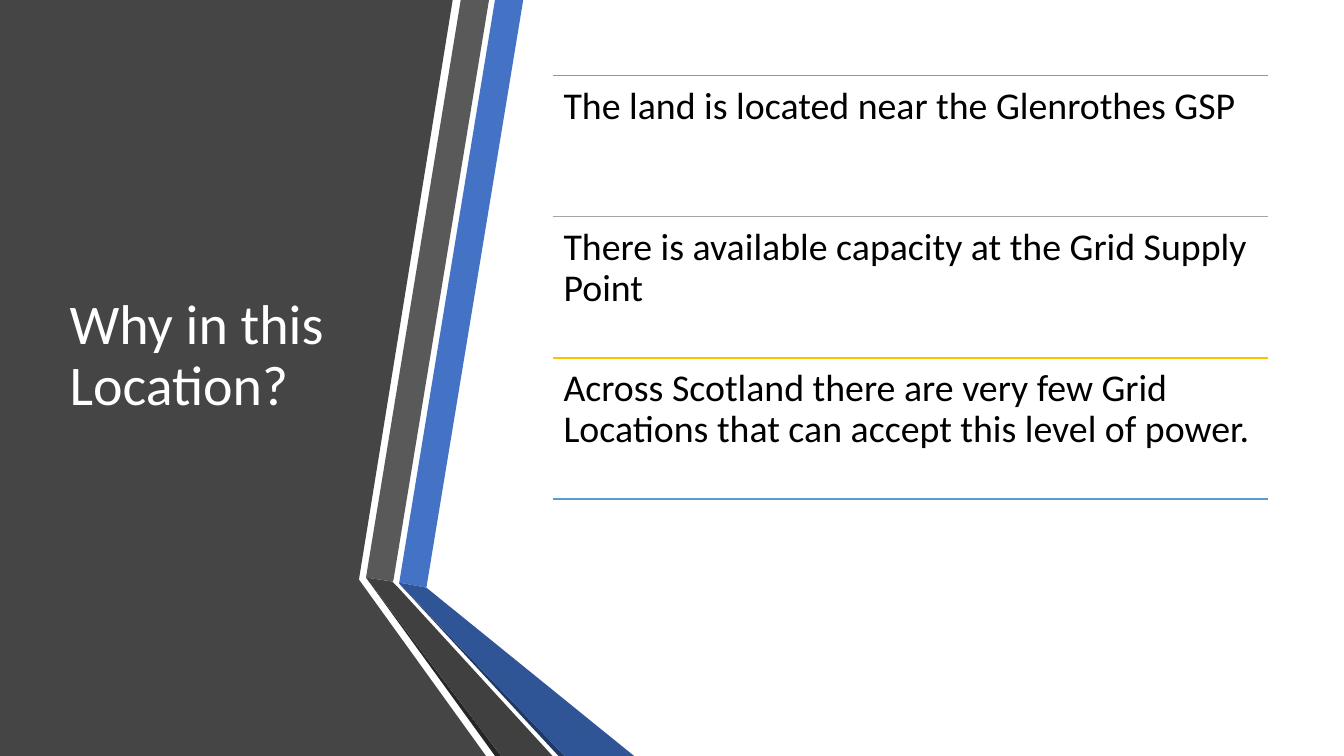
from dataclasses import dataclass

from lxml import etree
from pptx import Presentation
from pptx.dml.color import RGBColor
from pptx.enum.shapes import MSO_CONNECTOR
from pptx.enum.text import MSO_ANCHOR, MSO_AUTO_SIZE, PP_ALIGN
from pptx.oxml.ns import qn
from pptx.util import Pt

STRAIGHT = MSO_CONNECTOR.STRAIGHT
TOP, MIDDLE = MSO_ANCHOR.TOP, MSO_ANCHOR.MIDDLE
LEFT = PP_ALIGN.LEFT
NO_AUTOFIT = MSO_AUTO_SIZE.NONE

EMU_PER_PX = 9144
SLIDE_WIDTH, SLIDE_HEIGHT = 1333, 750
TITLE_ONLY_LAYOUT = 5


@dataclass(frozen=True)
class Theme:
    font: str = "Calibri"
    title_size: int = 40
    reason_size: int = 27
    title_color: str = "FFFFFF"
    reason_color: str = "000000"
    panel: str = "454545"
    blue: str = "4472C4"
    blue_fold: str = "2F5597"
    blue_edge: str = "203864"
    gray: str = "595959"
    gray_fold: str = "404040"
    gray_edge: str = "262626"
    rules: tuple = ("ED7D31", "A5A5A5", "FFC000", "5B9BD5")


THEME = Theme()

RIBBONS = [
    (THEME.panel, [(0, 0), (449, 0), (356, 575), (482, 750), (0, 750)]),
    (THEME.blue, [(396, 578), (423, 583), (519, 0), (491, 0)]),
    (THEME.gray, [(485, 0), (457, 0), (363, 573), (390, 577)]),
    (THEME.gray_edge, [(363, 573), (491, 750), (497, 750)]),
    (THEME.blue_edge, [(396, 579), (554, 750), (560, 750)]),
    (THEME.blue_fold, [(396, 578), (396, 579), (560, 750), (629, 750), (423, 583)]),
    (THEME.gray_fold, [(363, 573), (497, 750), (548, 750), (395, 583), (389, 577)]),
]

REASONS = [
    "The land is located near the Glenrothes GSP",
    "There is available capacity at the Grid Supply Point",
    "Across Scotland there are very few Grid Locations that can accept this level of power.",
]
REASON_LEFT, REASON_TOP = 548, 75
REASON_WIDTH, REASON_HEIGHT = 710, 140
REASON_INSET = 11


def px(length):
    return length * EMU_PER_PX


def write_text(shape, text, *, size, color, anchor=TOP, inset=None):
    frame = shape.text_frame
    frame.word_wrap = True
    frame.auto_size = NO_AUTOFIT
    frame.vertical_anchor = anchor
    if inset is not None:
        frame.margin_left = frame.margin_right = px(inset)
        frame.margin_top = frame.margin_bottom = px(inset)
    paragraph = frame.paragraphs[0]
    paragraph.alignment = LEFT
    paragraph.line_spacing = 0.9
    run = paragraph.add_run()
    run.text = text
    run.font.name = THEME.font
    run.font.size = Pt(size)
    run.font.color.rgb = RGBColor.from_string(color)


def add_ribbon(slide, color, points):
    builder = slide.shapes.build_freeform(*points[0], scale=EMU_PER_PX)
    builder.add_line_segments(points[1:], close=True)
    shape = builder.convert_to_shape()
    shape.shadow.inherit = False
    shape.fill.solid()
    shape.fill.fore_color.rgb = RGBColor.from_string(color)
    shape.line.fill.background()


def place_title(slide, text):
    title = slide.shapes.title
    title.left, title.top = px(59), px(75)
    title.width, title.height = px(304), px(558)
    title.element.getparent().append(title.element)
    write_text(title, text, size=THEME.title_size, color=THEME.title_color, anchor=MIDDLE)


def add_rule(slide, top, color):
    right = REASON_LEFT + REASON_WIDTH
    rule = slide.shapes.add_connector(STRAIGHT, px(REASON_LEFT), px(top), px(right), px(top))
    rule.line.color.rgb = RGBColor.from_string(color)
    rule.line.width = Pt(1)
    etree.SubElement(rule.element.spPr, qn("a:effectLst"))


def add_reason(slide, top, text):
    box = slide.shapes.add_textbox(px(REASON_LEFT), px(top), px(REASON_WIDTH), px(REASON_HEIGHT))
    write_text(box, text, size=THEME.reason_size, color=THEME.reason_color, inset=REASON_INSET)


def main():
    presentation = Presentation()
    presentation.slide_width = px(SLIDE_WIDTH)
    presentation.slide_height = px(SLIDE_HEIGHT)
    slide = presentation.slides.add_slide(presentation.slide_layouts[TITLE_ONLY_LAYOUT])
    for color, points in RIBBONS:
        add_ribbon(slide, color, points)
    place_title(slide, "Why in this Location?")
    for row, color in enumerate(THEME.rules):
        add_rule(slide, REASON_TOP + row * REASON_HEIGHT, color)
    for row, text in enumerate(REASONS):
        add_reason(slide, REASON_TOP + row * REASON_HEIGHT, text)
    presentation.save("out.pptx")


if __name__ == "__main__":
    main()
